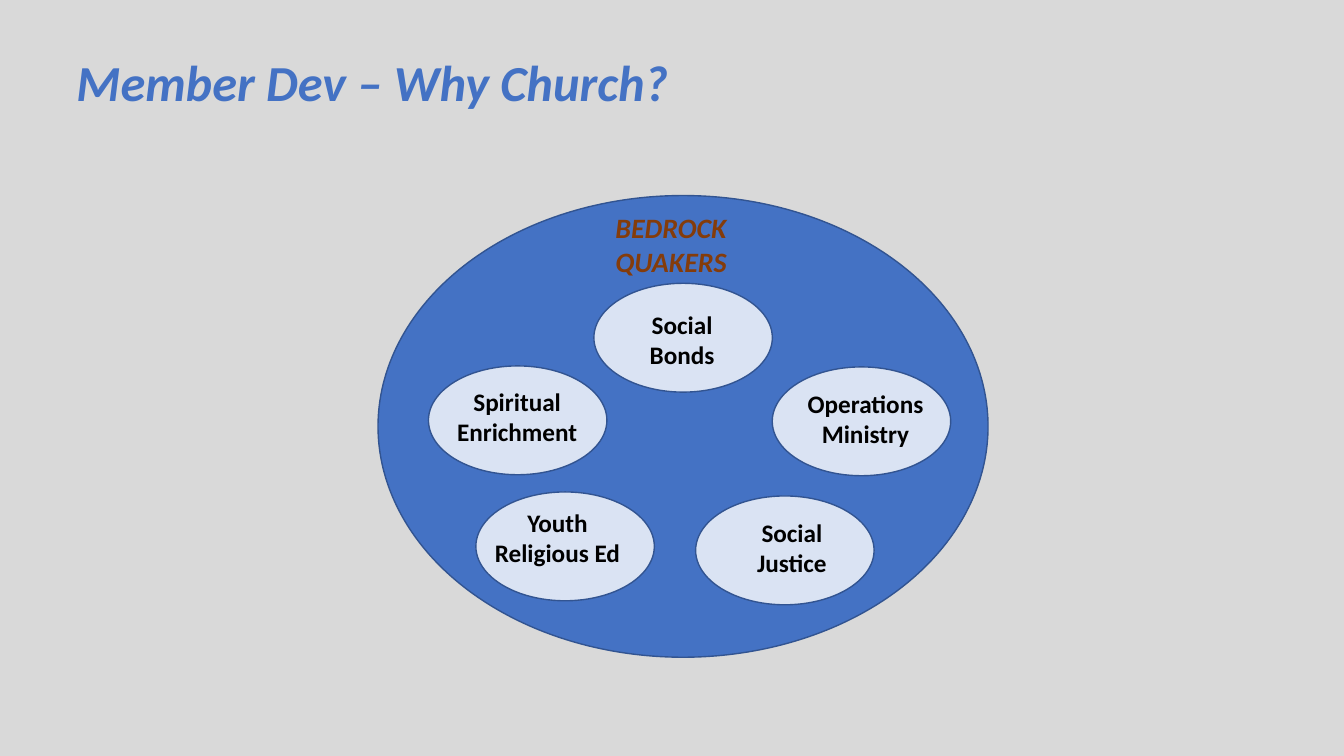
from pptx import Presentation
from pptx import util as u
from pptx.dml.color import RGBColor
from pptx.enum import shapes, text

BLUE, OUTLINE, PALE = "4472C4", "325491", "DAE3F3"
BROWN, BLACK, GREY = "843C0B", "000000", "D9D9D9"


def colour(hex_value):
    return RGBColor.from_string(hex_value)


class Board:
    """Holds the style and current slide; lengths are percent of the slide's size."""

    def __init__(self, prs, background):
        self.width, self.height = prs.slide_width, prs.slide_height
        self.font = "Calibri"
        self.slide = prs.slides.add_slide(prs.slide_layouts[6])
        backdrop = self.slide.background.fill
        backdrop.solid()
        backdrop.fore_color.rgb = colour(background)

    def place(self, left, top, width, height):
        return (round(left * self.width / 100), round(top * self.height / 100),
                round(width * self.width / 100), round(height * self.height / 100))

    def ellipse(self, box, fill):
        oval = self.slide.shapes.add_shape(
            shapes.MSO_SHAPE.OVAL, *self.place(*box))
        oval.shadow.inherit = False
        oval.fill.solid()
        oval.fill.fore_color.rgb = colour(fill)
        oval.line.color.rgb = colour(OUTLINE)
        oval.line.width = u.Pt(1)

    def label(self, box, wording, size, ink, align=text.PP_ALIGN.CENTER, italic=False):
        frame = self.slide.shapes.add_textbox(*self.place(*box)).text_frame
        frame.word_wrap = True
        frame.auto_size = text.MSO_AUTO_SIZE.SHAPE_TO_FIT_TEXT
        line = frame.paragraphs[0]
        line.alignment = align
        run = line.add_run()
        run.text = wording
        style = {"name": self.font, "size": u.Pt(size), "bold": True, "italic": italic}
        for key, value in style.items():
            setattr(run.font, key, value)
        run.font.color.rgb = colour(ink)


# Reason, left and top of its ellipse, left, top and width of its label
REASONS = [
    ("Spiritual Enrichment", (31.88, 48.4), (33.16, 50.4, 10.65)),
    ("Social Bonds", (44.19, 37.47), (46.59, 40.27, 8.33)),
    ("Operations Ministry", (57.46, 48.53), (59.11, 50.67, 10.58)),
    ("Social Justice", (51.76, 65.6), (54.76, 67.73, 8.33)),
    ("Youth Religious Ed", (35.41, 65.07), (35.93, 66.4, 11.1)),
]
REASON_SIZE = (13.28, 14.4)
LABEL_HEIGHT = 9.47


def main():
    prs = Presentation()
    prs.slide_width, prs.slide_height = u.Inches(13.33), u.Inches(7.5)
    board = Board(prs, GREY)
    board.label((4.95, 6.13, 78.47, 9.47), "Member Dev – Why Church?", 36, BLUE,
                align=text.PP_ALIGN.LEFT, italic=True)
    board.ellipse((28.13, 25.87, 45.39, 61.07), BLUE)
    for reason, corner, label_box in REASONS:
        board.ellipse((*corner, *REASON_SIZE), PALE)
        board.label((*label_box, LABEL_HEIGHT), reason, 18, BLACK)
    board.label((43.81, 27.2, 12.23, 10.27), "BEDROCK QUAKERS", 20, BROWN, italic=True)
    prs.save("out.pptx")


if __name__ == "__main__":
    main()
